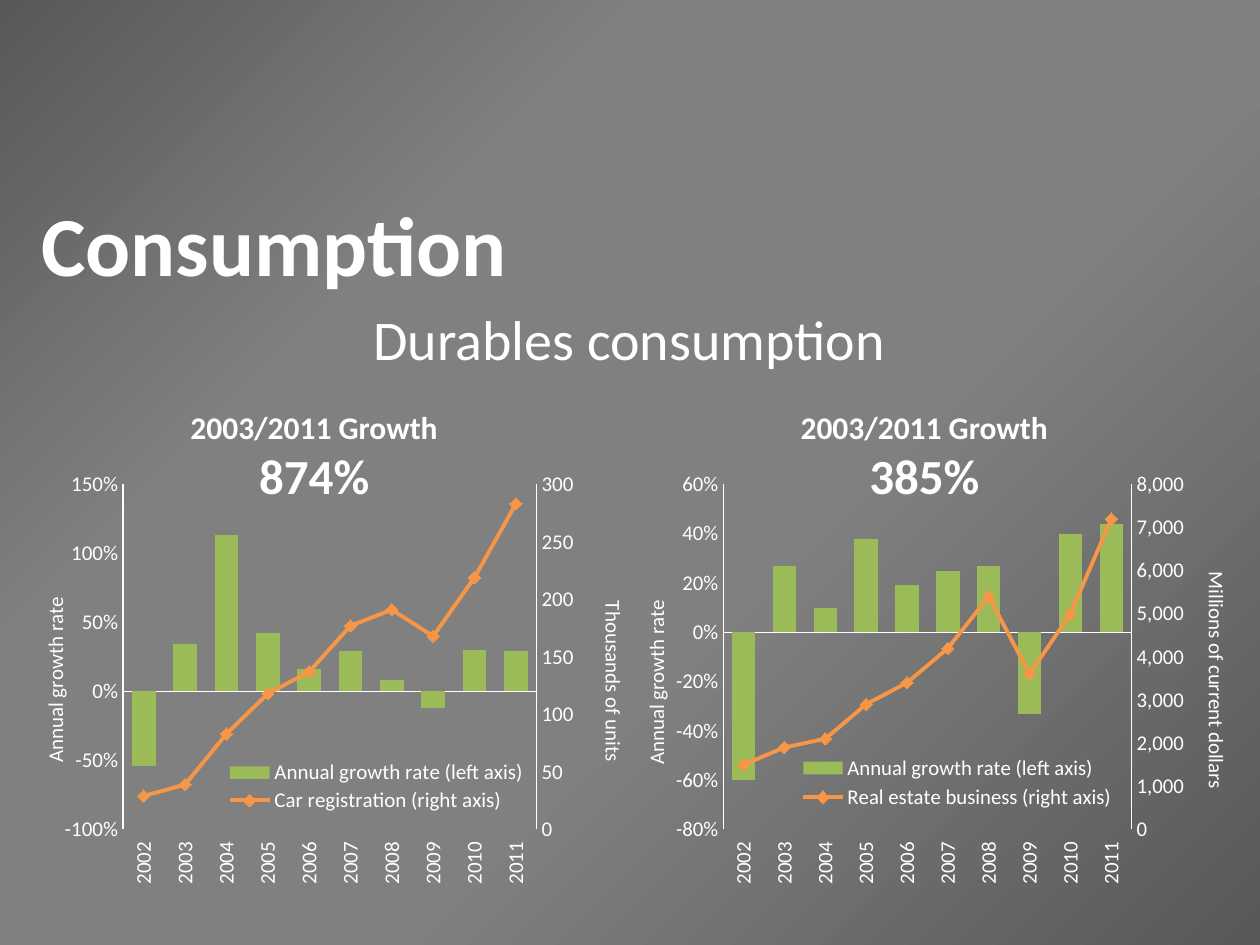
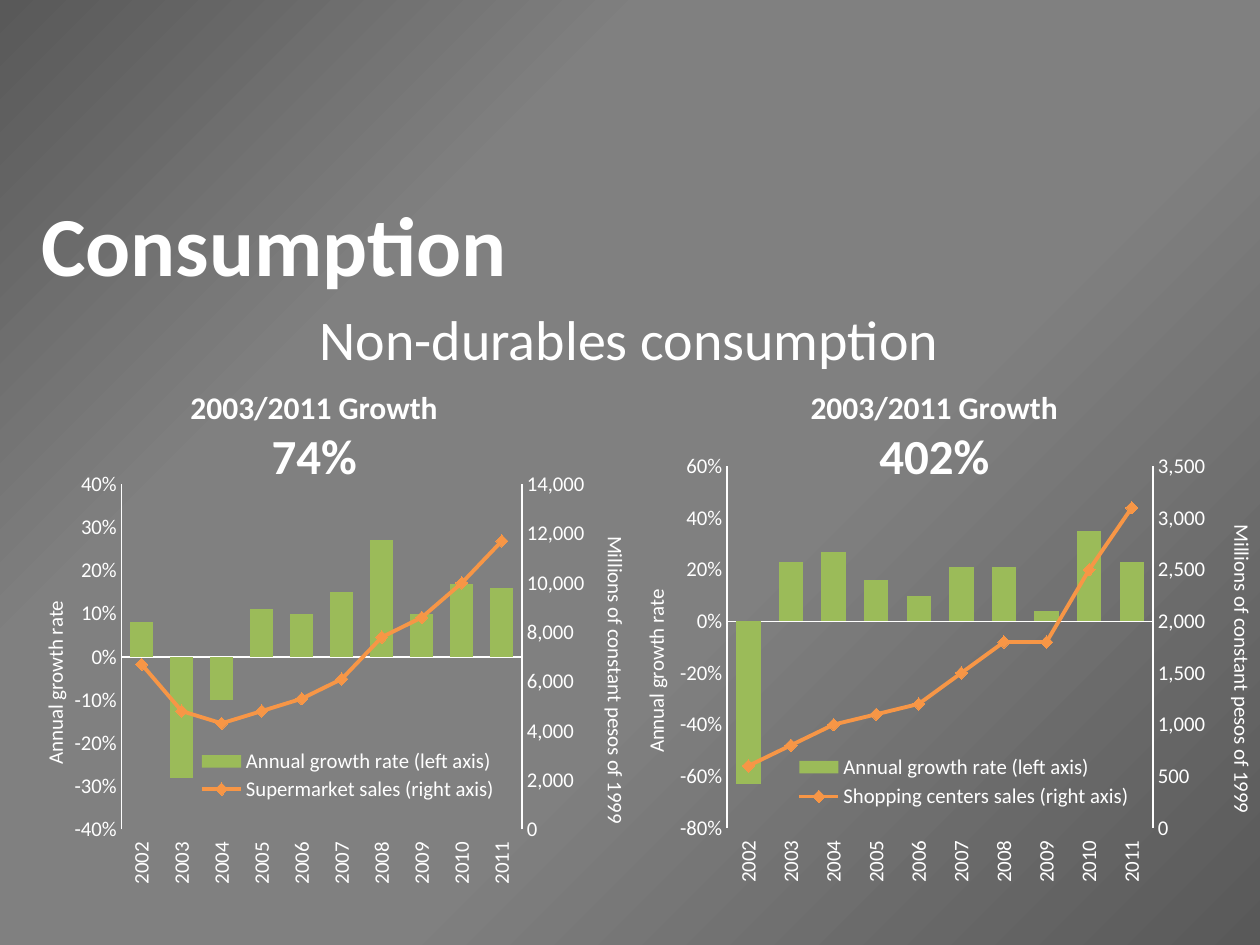
from copy import deepcopy

from pptx import Presentation
from pptx.chart.axis import ValueAxis
from pptx.chart.data import CategoryChartData
from pptx.dml.color import RGBColor
from pptx.enum.chart import (
    XL_CHART_TYPE as ChartType,
    XL_LEGEND_POSITION as LegendSide,
    XL_MARKER_STYLE as Marker,
    XL_TICK_LABEL_POSITION as LabelSpot,
    XL_TICK_MARK as Tick,
)
from pptx.enum.text import MSO_ANCHOR, MSO_AUTO_SIZE, PP_ALIGN
from pptx.oxml import parse_xml
from pptx.oxml.ns import nsdecls, qn
from pptx.util import Cm, Pt

# Shared look
FONT = "Calibri"
COLORS = {
    "text": "FFFFFF",
    "edge": "595959",
    "middle": "808080",
    "growth": "9BBB59",
    "level": "F79646",
}
BACKGROUND_STOPS = [(0, "edge"), (40, "middle"), (70, "middle"), (100, "edge")]
TITLE = "Consumption"
GROWTH_HEADING = "2003/2011 Growth"
GROWTH_AXIS = "Annual growth rate"
GROWTH_SERIES = "Annual growth rate (left axis)"
YEARS = [str(year) for year in range(2002, 2012)]

# Content: frames in cm; plot, legend and axis title places in % of the chart;
# scales as minimum, maximum, step
SLIDES = [
    {
        "subtitle": "Durables consumption",
        "heading_top": 8.1,
        "charts": [
            {
                "frame": (0.58, 9.32, 12.19, 8.71),
                "heading_left": 3.58,
                "total": "874%",
                "series": "Car registration (right axis)",
                "unit": "Thousands of units",
                "growth": [-0.54, 0.34, 1.13, 0.42, 0.16, 0.29, 0.08, -0.12, 0.3, 0.29],
                "level": [29, 39, 83, 118, 137, 177, 191, 168, 219, 283],
                "scales": [(-1, 1.5, 0.5), (0, 300, 50)],
                "plot_width": 68.4,
                "legend": (32, 68.3, 51, 13.5),
                "axis_titles": [(1.4, 30.3), (93.5, 31.2)],
            },
            {
                "frame": (12.7, 9.32, 12.19, 8.71),
                "heading_left": 15.88,
                "total": "385%",
                "series": "Real estate business (right axis)",
                "unit": "Millions of current dollars",
                "growth": [-0.6, 0.27, 0.1, 0.38, 0.19, 0.25, 0.27, -0.33, 0.4, 0.44],
                "level": [1500, 1900, 2100, 2900, 3400, 4200, 5400, 3600, 5000, 7200],
                "scales": [(-0.8, 0.6, 0.2), (0, 8000, 1000)],
                "plot_width": 68.4,
                "legend": (27.8, 66.9, 54, 14.5),
                "axis_titles": [(1.4, 30.6), (95, 24.5)],
            },
        ],
    },
    {
        "subtitle": "Non-durables consumption",
        "heading_top": 7.7,
        "charts": [
            {
                "frame": (0.58, 9.32, 12.19, 8.71),
                "heading_left": 3.58,
                "total": "74%",
                "series": "Supermarket sales (right axis)",
                "unit": "Millions of constant pesos of 1999",
                "growth": [0.08, -0.28, -0.1, 0.11, 0.1, 0.15, 0.27, 0.1, 0.17, 0.16],
                "level": [6700, 4800, 4300, 4800, 5300, 6100, 7800, 8600, 10000, 11700],
                "scales": [(-0.4, 0.4, 0.1), (0, 14000, 2000)],
                "plot_width": 67.2,
                "legend": (27.6, 65.7, 52, 13.5),
                "axis_titles": [(1.4, 30.6), (95.3, 16.2)],
            },
            {
                "frame": (12.7, 8.94, 12.7, 9.12),
                "heading_left": 16.08,
                "total": "402%",
                "series": "Shopping centers sales (right axis)",
                "unit": "Millions of constant pesos of 1999",
                "growth": [-0.63, 0.23, 0.27, 0.16, 0.1, 0.21, 0.21, 0.04, 0.35, 0.23],
                "level": [600, 800, 1000, 1100, 1200, 1500, 1800, 1800, 2500, 3100],
                "scales": [(-0.8, 0.6, 0.2), (0, 3500, 500)],
                "plot_width": 68.4,
                "legend": (25.9, 67.8, 55.5, 14),
                "axis_titles": [(1.3, 30.9), (95.2, 17.1)],
            },
        ],
    },
]


def color(name):
    return RGBColor.from_string(COLORS[name])


def style_font(font, size, bold=False):
    font.name = FONT
    font.size = Pt(size)
    font.bold = bold
    font.color.rgb = color("text")


def set_background(master):
    """Give every slide the diagonal grey gradient."""
    master.background.fill.gradient()
    gradient = next(master.element.iter(qn("a:gradFill")))
    stops = "".join(
        f'<a:gs pos="{place * 1000}"><a:srgbClr val="{COLORS[name]}"/></a:gs>'
        for place, name in BACKGROUND_STOPS
    )
    gradient.getparent().replace(gradient, parse_xml(
        f'<a:gradFill {nsdecls("a")} rotWithShape="1"><a:gsLst>{stops}</a:gsLst>'
        '<a:path path="circle"><a:fillToRect l="100000" t="100000"/></a:path>'
        '<a:tileRect r="-100000" b="-100000"/></a:gradFill>'
    ))


def drop_children(parent, tag):
    for child in parent.findall(qn(tag)):
        parent.remove(child)


def place_part(part, index, percents, inner=False):
    """Fix the place of a chart part, as shares of the chart."""
    drop_children(part, "c:layout")
    target = '<c:layoutTarget val="inner"/>' if inner else ""
    modes = '<c:xMode val="edge"/><c:yMode val="edge"/>'
    shares = "".join(
        f'<c:{key} val="{percent / 100:.3f}"/>' for key, percent in zip("xywh", percents)
    )
    part.insert(index, parse_xml(
        f'<c:layout {nsdecls("c")}><c:manualLayout>{target}{modes}{shares}'
        "</c:manualLayout></c:layout>"
    ))


def no_fill():
    return parse_xml(
        f'<c:spPr {nsdecls("c", "a")}><a:noFill/><a:ln><a:noFill/></a:ln></c:spPr>'
    )


def set_values(element, **values):
    for tag, value in values.items():
        element.find(qn(f"c:{tag}")).set("val", value)


def split_to_right_axis(plot_area):
    """Turn the second series into a line with its own axes; return the value axes."""
    bars = plot_area.find(qn("c:barChart"))
    line = parse_xml(
        f'<c:lineChart {nsdecls("c")}><c:grouping val="standard"/>'
        '<c:varyColors val="0"/><c:marker val="1"/>'
        '<c:axId val="5001"/><c:axId val="5002"/></c:lineChart>'
    )
    series = bars.findall(qn("c:ser"))[1]
    drop_children(series, "c:invertIfNegative")
    line.insert(2, series)
    bars.addnext(line)

    left, years = plot_area.find(qn("c:valAx")), plot_area.find(qn("c:catAx"))
    right, hidden_years = deepcopy(left), deepcopy(years)
    set_values(right, axId="5002", crossAx="5001", axPos="r", crosses="max")
    set_values(hidden_years, axId="5001", crossAx="5002", delete="1")
    left.addnext(right)
    right.addnext(hidden_years)
    return left, right


def style_axis(axis):
    axis.has_major_gridlines = False
    axis.major_tick_mark = axis.minor_tick_mark = Tick.NONE
    axis.format.line.color.rgb = color("text")
    axis.format.line.width = Pt(0.75)
    style_font(axis.tick_labels.font, 12)


def style_value_axis(element, title, spot, scale, number_format, turn):
    axis = ValueAxis(element)
    style_axis(axis)
    axis.minimum_scale, axis.maximum_scale, axis.major_unit = scale
    axis.tick_labels.number_format = number_format
    axis.tick_labels.number_format_is_linked = False
    frame = axis.axis_title.text_frame
    frame.text = title
    style_font(frame.paragraphs[0].runs[0].font, 12)
    title_element = element.find(qn("c:title"))
    next(title_element.iter(qn("a:bodyPr"))).set("rot", str(turn * 60000))
    place_part(title_element, 1, spot)


def add_growth_chart(page, item):
    data = CategoryChartData()
    data.categories = YEARS
    data.add_series(GROWTH_SERIES, item["growth"], "0%")
    data.add_series(item["series"], item["level"], "#,##0")
    chart = page.shapes.add_chart(
        ChartType.COLUMN_CLUSTERED, *map(Cm, item["frame"]), data
    ).chart
    style_font(chart.font, 12)
    chart.has_title = False
    plot_area = next(chart.element.iter(qn("c:plotArea")))
    value_axes = split_to_right_axis(plot_area)

    # Axes
    style_axis(chart.category_axis)
    chart.category_axis.tick_label_position = LabelSpot.LOW
    year_labels = plot_area.find(qn("c:catAx")).find(qn("c:txPr"))
    year_labels.find(qn("a:bodyPr")).set("rot", str(-90 * 60000))
    titles = [GROWTH_AXIS, item["unit"]]
    for parts in zip(value_axes, titles, item["axis_titles"], item["scales"],
                     ["0%", "#,##0"], [-90, 90]):
        style_value_axis(*parts)

    # Columns and line
    columns, lines = chart.plots
    columns.gap_width = 75
    columns.vary_by_categories = False
    growth, level = columns.series[0], lines.series[0]
    growth.invert_if_negative = False
    growth.format.fill.solid()
    growth.format.fill.fore_color.rgb = color("growth")
    level.smooth = False
    level.format.line.color.rgb = color("level")
    level.format.line.width = Pt(2.25)
    level.marker.style = Marker.DIAMOND
    level.marker.size = 7
    level.marker.format.fill.solid()
    level.marker.format.fill.fore_color.rgb = color("level")
    level.marker.format.line.color.rgb = color("level")

    # Legend, plot place and clear background
    chart.has_legend = True
    chart.legend.position = LegendSide.RIGHT
    chart.legend.include_in_layout = False
    style_font(chart.legend.font, 12)
    place_part(next(chart.element.iter(qn("c:legend"))), 1, item["legend"])
    place_part(plot_area, 0, (15.6, 5.1, item["plot_width"], 79.9), inner=True)
    plot_area.append(no_fill())
    chart.element.find(qn("c:chart")).addnext(no_fill())


def fill_title(page, subtitle):
    title = page.shapes.title
    title.left, title.top, title.width, title.height = map(Cm, (0.58, 3.76, 24.21, 14.48))
    frame = title.text_frame
    frame.text = f"{TITLE}\n{subtitle}"
    frame.auto_size = MSO_AUTO_SIZE.NONE
    frame.vertical_anchor = MSO_ANCHOR.TOP
    heading, sub = frame.paragraphs
    heading.alignment, sub.alignment = PP_ALIGN.LEFT, PP_ALIGN.CENTER
    sub.space_before = Pt(6.4)
    style_font(heading.runs[0].font, 48, bold=True)
    style_font(sub.runs[0].font, 32)


def add_growth_heading(page, left, top, total):
    box = page.shapes.add_textbox(Cm(left), Cm(top), Cm(5.51), Cm(2.21))
    frame = box.text_frame
    frame.text = f"{GROWTH_HEADING}\n{total}"
    frame.word_wrap = False
    frame.auto_size = MSO_AUTO_SIZE.SHAPE_TO_FIT_TEXT
    for para, size in zip(frame.paragraphs, (18, 28)):
        para.alignment = PP_ALIGN.CENTER
        style_font(para.runs[0].font, size, bold=True)


def main():
    deck = Presentation()
    deck.slide_width, deck.slide_height = Cm(25.4), Cm(19.05)
    set_background(deck.slide_master)
    title_only = deck.slide_layouts[5]
    for content in SLIDES:
        page = deck.slides.add_slide(title_only)
        fill_title(page, content["subtitle"])
        for item in content["charts"]:
            add_growth_chart(page, item)
        for item in content["charts"]:
            add_growth_heading(page, item["heading_left"], content["heading_top"], item["total"])
    deck.save("out.pptx")


if __name__ == "__main__":
    main()
